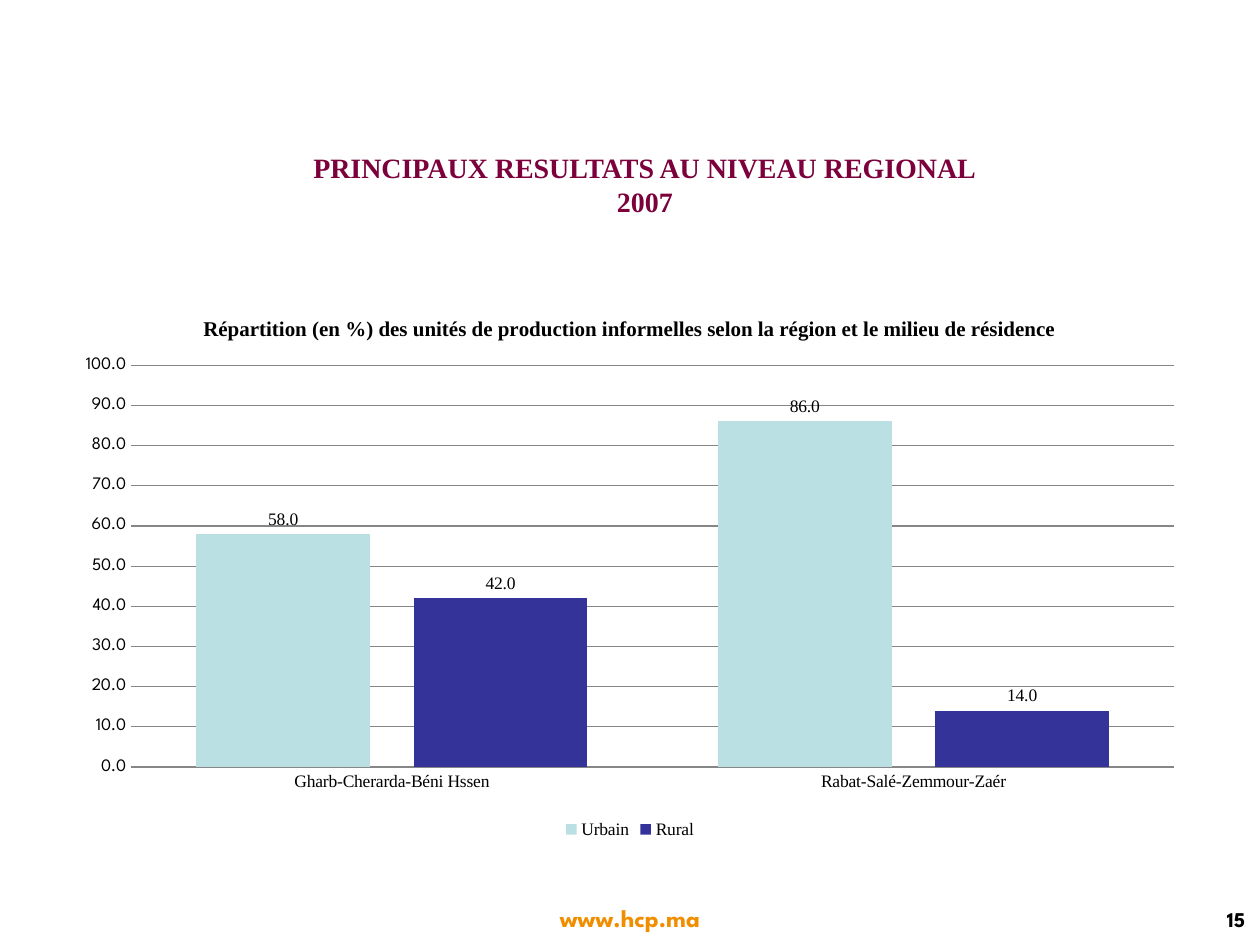
from lxml import etree
from pptx import Presentation
from pptx.chart.data import CategoryChartData
from pptx.dml.color import RGBColor
from pptx.enum.chart import XL_CHART_TYPE, XL_LABEL_POSITION, XL_LEGEND_POSITION, XL_TICK_MARK
from pptx.enum.text import MSO_ANCHOR, PP_ALIGN
from pptx.oxml.ns import qn
from pptx.util import Cm, Pt

COLUMNS = XL_CHART_TYPE.COLUMN_CLUSTERED
OUTSIDE = XL_LABEL_POSITION.OUTSIDE_END
BOTTOM = XL_LEGEND_POSITION.BOTTOM
NO_TICK = XL_TICK_MARK.NONE
TOP, MIDDLE = MSO_ANCHOR.TOP, MSO_ANCHOR.MIDDLE
CENTER, RIGHT = PP_ALIGN.CENTER, PP_ALIGN.RIGHT

SERIF, SANS = "Times New Roman", "League Spartan"
BLACK, GRID = "000000", "868686"

TITLE_BOX = (3.3, 2.13, 19.4, 3.18)
CHART_BOX = (1.27, 5.92, 22.86, 11.1)
SITE_BOX = (9.7, 18.08, 6, 0.84)
NUMBER_BOX = (21.49, 18.08, 3.86, 0.89)

REGIONS = ["Gharb-Cherarda-Béni Hssen", "Rabat-Salé-Zemmour-Zaér"]
SERIES = [("Urbain", (58, 86), "BBE0E3"), ("Rural", (42, 14), "333399")]
CHART_TITLE = ("Répartition (en %) des unités de production informelles "
               "selon la région et le milieu de résidence")
PLOT_AREA = {"x": 0.06, "y": 0.13, "w": 0.92, "h": 0.73}


def color(hex_text):
    return RGBColor.from_string(hex_text)


def set_font(font, name, size, hex_text=BLACK, bold=False):
    for key, value in {"name": name, "size": Pt(size), "bold": bold}.items():
        setattr(font, key, value)
    font.color.rgb = color(hex_text)


def add_text(page, box, text, font, align, anchor):
    frame = page.shapes.add_textbox(*map(Cm, box)).text_frame
    frame.word_wrap = True
    frame.vertical_anchor = anchor
    para = frame.paragraphs[0]
    para.text = text
    para.alignment = align
    for span in para.runs:
        set_font(span.font, *font)


def place_plot(chart):
    """Fix the inner plot area as fractions of the chart box."""
    plot_area = chart.plots[0]._element.getparent()
    for old in plot_area.findall(qn("c:layout")):
        plot_area.remove(old)
    layout = etree.Element(qn("c:layout"))
    plot_area.insert(0, layout)
    manual = etree.SubElement(layout, qn("c:manualLayout"))
    values = {"layoutTarget": "inner", "xMode": "edge", "yMode": "edge", **PLOT_AREA}
    for tag, value in values.items():
        etree.SubElement(manual, qn(f"c:{tag}")).set("val", str(value))


def format_axes(chart):
    for axis, font_name in ((chart.category_axis, SERIF), (chart.value_axis, SANS)):
        axis.major_tick_mark = axis.minor_tick_mark = NO_TICK
        set_font(axis.tick_labels.font, font_name, 10)
    baseline = chart.category_axis.format.line
    scale = chart.value_axis
    scale.minimum_scale, scale.maximum_scale, scale.major_unit = 0, 100, 10
    scale.tick_labels.number_format = "0.0"
    scale.tick_labels.number_format_is_linked = False
    scale.format.line.fill.background()
    scale.has_major_gridlines = True
    for line in (baseline, scale.major_gridlines.format.line):
        line.color.rgb = color(GRID)
        line.width = Pt(0.75)


def format_series(plot):
    plot.gap_width, plot.overlap, plot.vary_by_categories = 75, -25, False
    for series, (_, _, fill) in zip(plot.series, SERIES):
        series.format.fill.solid()
        series.format.fill.fore_color.rgb = color(fill)
        labels = series.data_labels
        settings = {"show_value": True, "number_format": "0.0",
                    "number_format_is_linked": False, "position": OUTSIDE}
        for key, value in settings.items():
            setattr(labels, key, value)
        set_font(labels.font, SERIF, 10)


def add_region_chart(page, box):
    data = CategoryChartData(number_format="0.0")
    data.categories = REGIONS
    for name, values, _ in SERIES:
        data.add_series(name, values)
    chart = page.shapes.add_chart(COLUMNS, *map(Cm, box), data).chart
    set_font(chart.font, SANS, 10)
    chart.has_title = True
    para = chart.chart_title.text_frame.paragraphs[0]
    para.text = CHART_TITLE
    set_font(para.runs[0].font, SERIF, 12, bold=True)
    chart.chart_title.include_in_layout = False
    chart.has_legend = True
    chart.legend.position = BOTTOM
    chart.legend.include_in_layout = False
    set_font(chart.legend.font, SERIF, 10)
    place_plot(chart)
    format_axes(chart)
    format_series(chart.plots[0])


def add_footer(page):
    add_text(page, SITE_BOX, "www.hcp.ma", (SANS, 14, "F18E00", True), CENTER, TOP)
    add_text(page, NUMBER_BOX, "15", (SANS, 12, BLACK, True), RIGHT, MIDDLE)


def main():
    deck = Presentation()
    deck.slide_width, deck.slide_height = Cm(25.4), Cm(19.05)
    page = deck.slides.add_slide(deck.slide_layouts[6])
    add_footer(page)
    add_text(page, TITLE_BOX, "PRINCIPAUX RESULTATS AU NIVEAU REGIONAL\v2007",
             (SERIF, 16, "7B003B", True), CENTER, MIDDLE)
    add_region_chart(page, CHART_BOX)
    deck.save("out.pptx")


if __name__ == "__main__":
    main()
